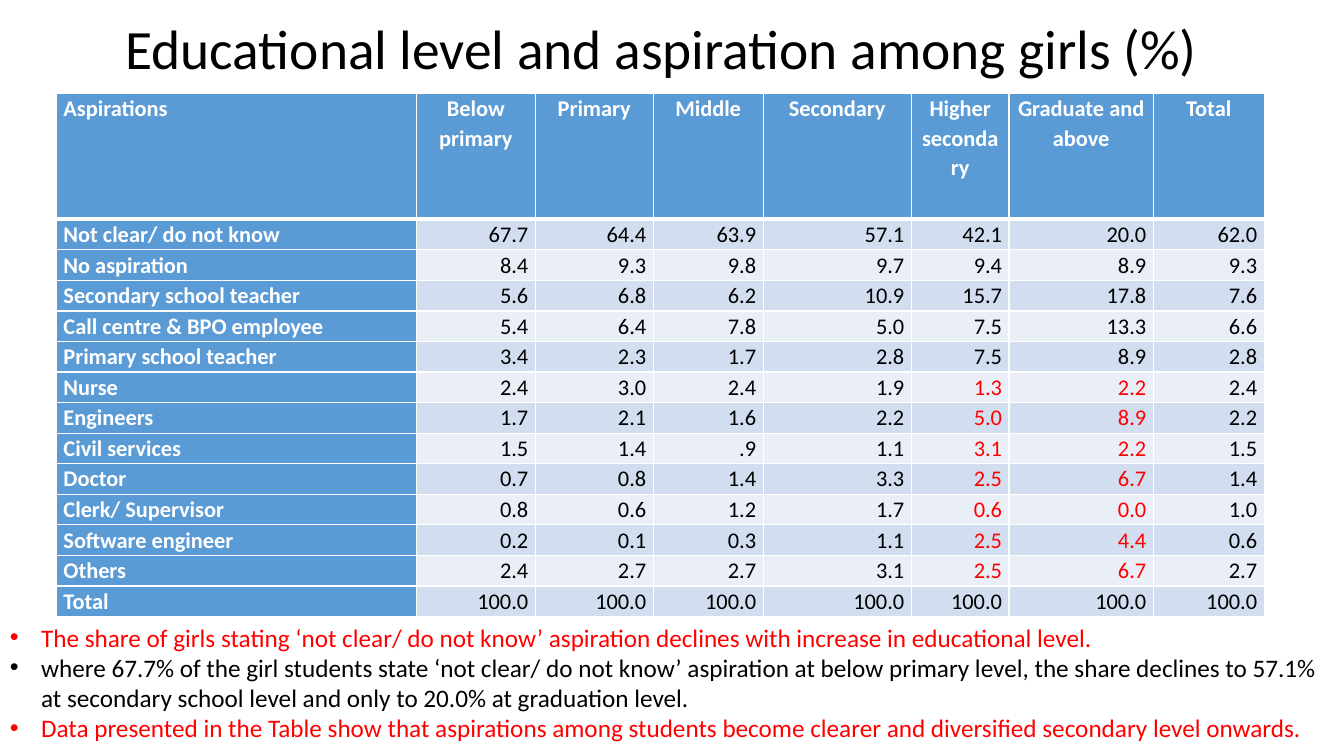
from lxml import etree
from pptx import Presentation
from pptx import util as u
from pptx.dml.color import RGBColor
from pptx.enum import text
from pptx.oxml.ns import qn

WIDE, HIGH = u.Inches(13.33), u.Inches(7.5)
FONT = "Calibri"
HUES = {"ink": "000000", "red": "FF0000", "white": "FFFFFF",
        "head": "5B9BD5", "dark": "D2DEEF", "light": "EAEFF7"}
ALIGN = text.PP_ALIGN
COLS = [3.57, 1.18, 1.17, 1.09, 1.47, 0.97, 1.43, 1.1]
HEADS = ["Aspirations", "Below primary", "Primary", "Middle", "Secondary",
         "Higher secondary", "Graduate and above", "Total"]
ROWS = [
    ("Not clear/ do not know", "67.7 64.4 63.9 57.1 42.1 20.0 62.0"),
    ("No aspiration", "8.4 9.3 9.8 9.7 9.4 8.9 9.3"),
    ("Secondary school teacher", "5.6 6.8 6.2 10.9 15.7 17.8 7.6"),
    ("Call centre & BPO employee", "5.4 6.4 7.8 5.0 7.5 13.3 6.6"),
    ("Primary school teacher", "3.4 2.3 1.7 2.8 7.5 8.9 2.8"),
    ("Nurse", "2.4 3.0 2.4 1.9 1.3 2.2 2.4"),
    ("Engineers", "1.7 2.1 1.6 2.2 5.0 8.9 2.2"),
    ("Civil services", "1.5 1.4 .9 1.1 3.1 2.2 1.5"),
    ("Doctor", "0.7 0.8 1.4 3.3 2.5 6.7 1.4"),
    ("Clerk/ Supervisor", "0.8 0.6 1.2 1.7 0.6 0.0 1.0"),
    ("Software engineer", "0.2 0.1 0.3 1.1 2.5 4.4 0.6"),
    ("Others", "2.4 2.7 2.7 3.1 2.5 6.7 2.7"),
    ("Total", "100.0 100.0 100.0 100.0 100.0 100.0 100.0"),
]
RED_ROWS, RED_COLS = range(6, 13), (5, 6)
NOTES = [
    ("The share of girls stating ‘not clear/ do not know’ aspiration declines "
     "with increase in educational level.", "red"),
    ("where 67.7% of the girl students state ‘not clear/ do not know’ aspiration "
     "at below primary level, the share declines to 57.1% at secondary school "
     "level and only to 20.0% at graduation level.", "ink"),
    ("Data presented in the Table show that aspirations among students become "
     "clearer and diversified secondary level onwards.", "red"),
]


def area(x, y, w, h):
    """Turn inches into a box of whole units."""
    return [u.Inches(v) for v in (x, y, w, h)]


def write(para, words, size, hue, bold=False):
    """Add one styled run to a paragraph."""
    run = para.add_run()
    run.text = words
    font = run.font
    font.name, font.size, font.bold = FONT, u.Pt(size), bold
    font.color.rgb = RGBColor.from_string(HUES[hue])


def title(slide, box):
    """Write the centred heading."""
    frame = slide.shapes.add_textbox(*box).text_frame
    frame.word_wrap = True
    frame.vertical_anchor = text.MSO_ANCHOR.MIDDLE
    para = frame.paragraphs[0]
    para.alignment, para.line_spacing = ALIGN.CENTER, 0.9
    write(para, "Educational level and aspiration among girls (%)", 39.6, "ink")


def edge(cell, side, width):
    """Draw one white side of a cell."""
    line = etree.SubElement(cell._tc.get_or_add_tcPr(), qn("a:ln" + side),
                            w=str(u.Pt(width)))
    fill = etree.SubElement(line, qn("a:solidFill"))
    etree.SubElement(fill, qn("a:srgbClr"), val=HUES["white"])


def paint(cell, words, row, col):
    """Style and fill a cell by its row and column."""
    head, label = row == 0, col == 0
    cell.margin_left = cell.margin_right = u.Inches(0.07)
    cell.margin_top = cell.margin_bottom = 0
    for side in "LRTB":
        thick = (side, row) in (("B", 0), ("T", 1))
        edge(cell, side, 3 if thick else 1)
    band = "dark" if row % 2 else "light"
    cell.fill.solid()
    cell.fill.fore_color.rgb = RGBColor.from_string(
        HUES["head" if head or label else band])
    para = cell.text_frame.paragraphs[0]
    para.line_spacing = 1.07
    para.alignment = (ALIGN.LEFT if label else
                      ALIGN.CENTER if head else ALIGN.RIGHT)
    red = row in RED_ROWS and col in RED_COLS
    hue = "white" if head or label else "red" if red else "ink"
    write(para, words, 16, hue, head or label)


def grid(slide, box):
    """Lay out the table of shares by aspiration and level."""
    lines = [HEADS] + [[name] + nums.split() for name, nums in ROWS]
    table = slide.shapes.add_table(len(lines), len(COLS), *box).table
    for col, part in zip(table.columns, COLS):
        col.width = round(box[2] * part / sum(COLS))
    top = round(box[3] * 0.24)
    for i, line in enumerate(lines):
        table.rows[i].height = (box[3] - top) // len(ROWS) if i else top
        for j, words in enumerate(line):
            paint(table.cell(i, j), words, i, j)


def notes(slide, box):
    """Write the bulleted findings."""
    frame = slide.shapes.add_textbox(*box).text_frame
    frame.word_wrap = True
    for i, (words, hue) in enumerate(NOTES):
        para = frame.add_paragraph() if i else frame.paragraphs[0]
        props = para._p.get_or_add_pPr()
        dent = u.Inches(0.31)
        props.set("marL", str(dent))
        props.set("indent", str(-dent))
        etree.SubElement(props, qn("a:buFont"), typeface="Arial")
        etree.SubElement(props, qn("a:buChar"), char="•")
        write(para, words, 18, hue)


def main():
    """Build and save the slide."""
    deck = Presentation()
    deck.slide_width, deck.slide_height = WIDE, HIGH
    slide = deck.slides.add_slide(deck.slide_layouts[6])
    title(slide, area(0.81, 0.2, 11.5, 0.63))
    grid(slide, area(0.56, 0.93, 11.98, 5.19))
    notes(slide, area(0, 6.12, 13.26, 1.31))
    deck.save("out.pptx")


if __name__ == "__main__":
    main()
